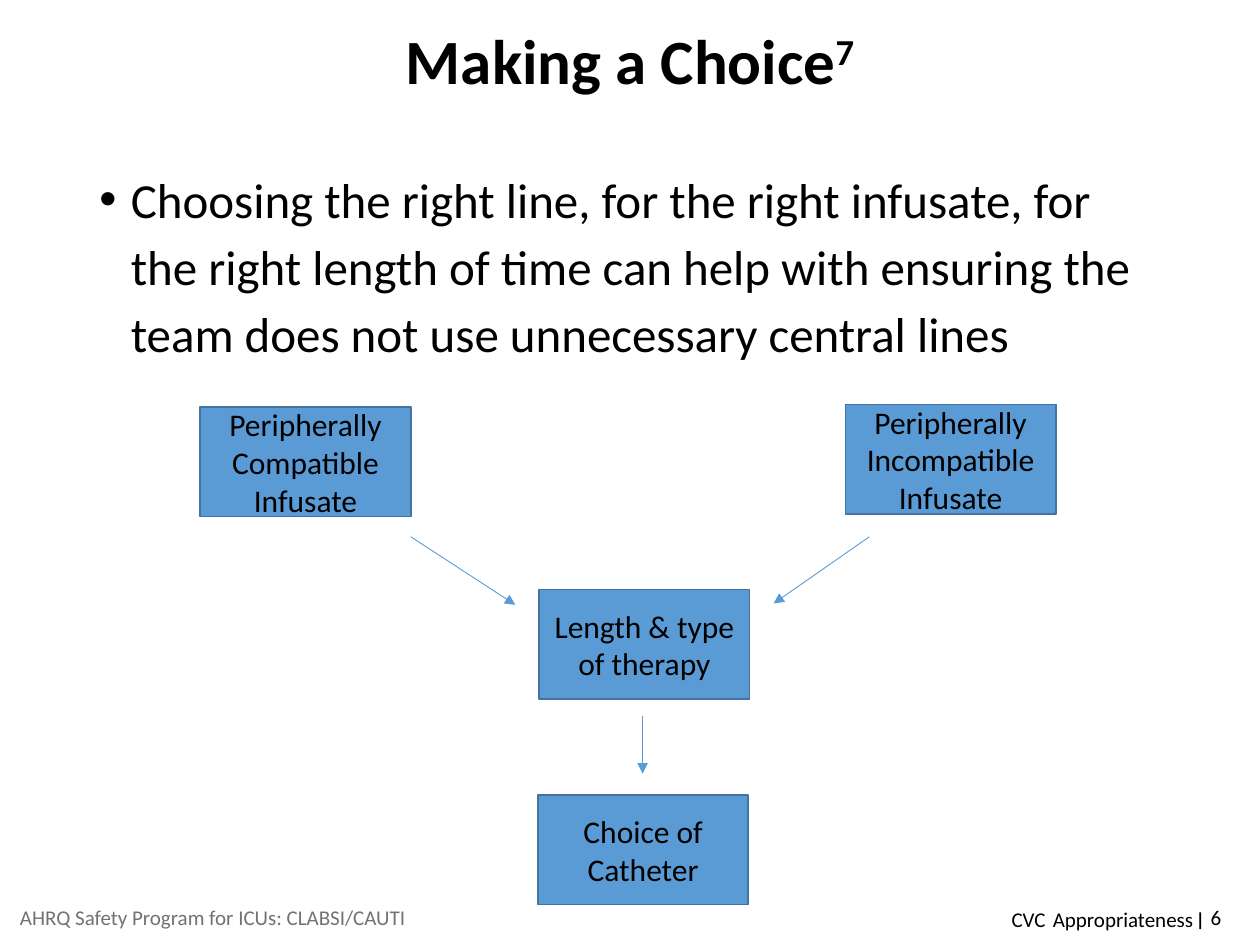
from lxml.etree import SubElement
from pptx import Presentation
from pptx.dml.color import RGBColor
from pptx.enum.shapes import MSO_CONNECTOR as Link, MSO_SHAPE as Shape
from pptx.enum.text import MSO_ANCHOR as Anchor, PP_ALIGN as Align
from pptx.oxml.ns import qn
from pptx.util import Inches, Pt

BLACK = RGBColor(0, 0, 0)
GREY = RGBColor(0x76, 0x71, 0x71)
BLUE = RGBColor(0x5B, 0x9B, 0xD5)
EDGE = RGBColor(0x43, 0x73, 0x9E)


def style(para, size, color=BLACK, align=Align.LEFT):
    para.alignment = align
    font = para.font
    font.name, font.size = "Calibri", Pt(size)
    font.color.rgb = color


def add_text(place, text, anchor=Anchor.MIDDLE):
    """Add a wrapping text box and return its paragraph."""
    frame = slide.shapes.add_textbox(*map(Inches, place)).text_frame
    frame.word_wrap = True
    frame.vertical_anchor = anchor
    para = frame.paragraphs[0]
    para.add_run().text = text
    return para


deck = Presentation()
deck.slide_width, deck.slide_height = Inches(10), Inches(7.5)
slide = deck.slides.add_slide(deck.slide_layouts[6])

# Title with a raised reference number
title = add_text((0.69, 0.01, 8.62, 0.89), "Making a Choice")
note = title.add_run()
note.text = "7"
note.font._element.set("baseline", "30000")
style(title, 36, align=Align.CENTER)
title.font.bold = True
title.line_spacing = 1.05

# Bullet
body = add_text(
    (0.69, 1.23, 8.62, 1.82),
    "Choosing the right line, for the right infusate, for the right length "
    "of time can help with ensuring the team does not use unnecessary "
    "central lines",
    Anchor.TOP,
)
props = body._p.get_or_add_pPr()
props.set("marL", str(Inches(0.25)))
props.set("indent", str(-Inches(0.25)))
SubElement(props, qn("a:buFont"), typeface="Arial")
SubElement(props, qn("a:buChar"), char="•")
style(body, 28)
body.line_spacing = 1.14

# Flow chart boxes
steps = [
    (1.59, 3.23, "Peripherally Compatible Infusate"),
    (6.71, 3.21, "Peripherally Incompatible Infusate"),
    (4.28, 4.68, "Length & type of therapy"),
    (4.27, 6.31, "Choice of Catheter"),
]
for left, top, text in steps:
    box = slide.shapes.add_shape(
        Shape.RECTANGLE, Inches(left), Inches(top), Inches(1.67), Inches(0.87)
    )
    box.shadow.inherit = False
    box.fill.solid()
    box.fill.fore_color.rgb = BLUE
    box.line.color.rgb = EDGE
    box.line.width = Pt(1)
    frame = box.text_frame
    frame.word_wrap = True
    frame.vertical_anchor = Anchor.MIDDLE
    frame.text = text
    style(frame.paragraphs[0], 18, align=Align.CENTER)

# Arrows between the boxes
arrows = [
    (3.26, 4.26, 4.09, 4.8),
    (6.9, 4.26, 6.14, 4.79),
    (5.1, 5.68, 5.1, 6.14),
]
for ends in arrows:
    arrow = slide.shapes.add_connector(Link.STRAIGHT, *map(Inches, ends))
    arrow.line.color.rgb = BLUE
    arrow.line.width = Pt(0.5)
    SubElement(arrow.line._get_or_add_ln(), qn("a:tailEnd"), type="triangle")
    SubElement(arrow._element.spPr, qn("a:effectLst"))

# Footer
program = add_text(
    (0, 7.08, 3.38, 0.4), "AHRQ Safety Program for ICUs: CLABSI/CAUTI"
)
style(program, 12, GREY, Align.CENTER)

topic = add_text((7.93, 7.06, 1.89, 0.4), "CVC", Anchor.TOP)
gap = topic.add_run()
gap.text = " "
gap.font.size = Pt(18)
topic.add_run().text = "Appropriateness ׀"
style(topic, 12)

number = add_text((7.54, 7.08, 2.25, 0.4), "6")
style(number, 12, align=Align.RIGHT)

deck.save("out.pptx")
